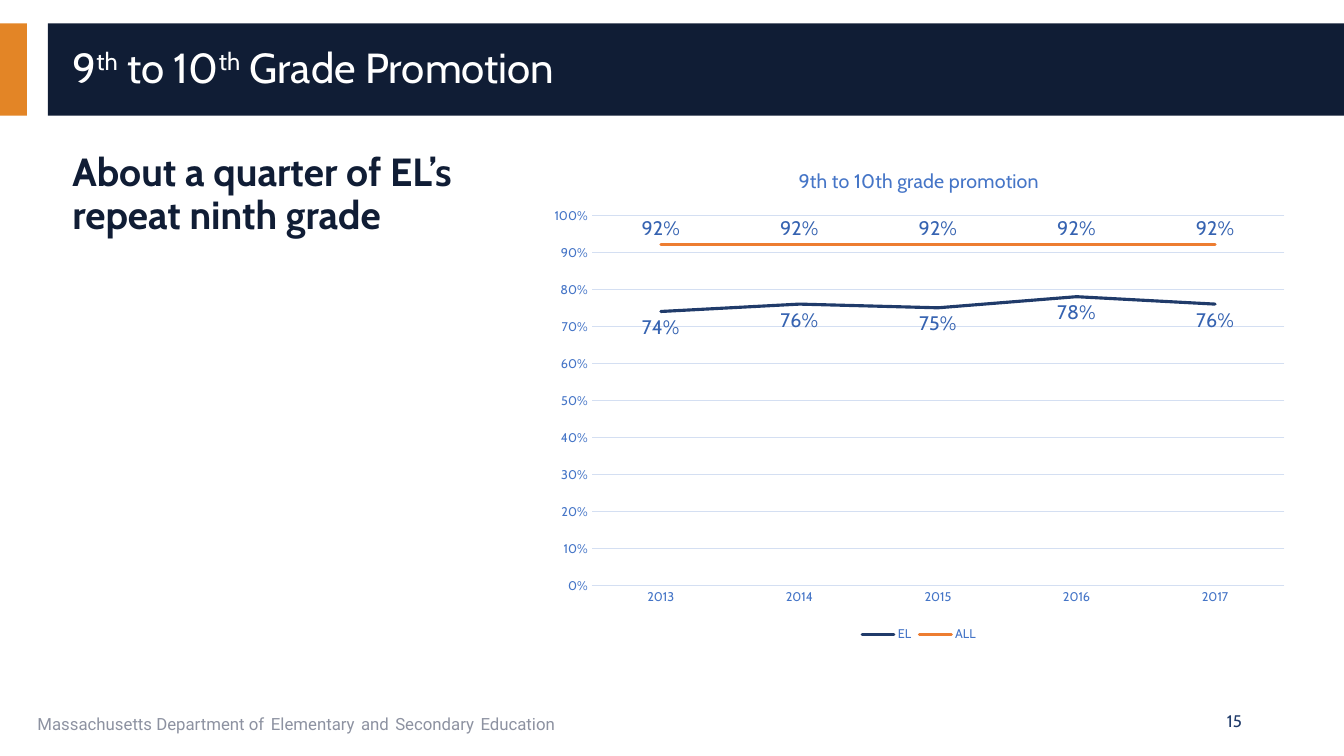
from lxml.etree import SubElement
from pptx import Presentation
from pptx.chart.data import CategoryChartData
from pptx.dml.color import RGBColor
from pptx.enum.chart import XL_CHART_TYPE, XL_LABEL_POSITION, XL_LEGEND_POSITION, XL_MARKER_STYLE, XL_TICK_MARK
from pptx.enum.shapes import MSO_SHAPE
from pptx.enum.text import MSO_ANCHOR, MSO_AUTO_SIZE, PP_ALIGN
from pptx.oxml.ns import qn
from pptx.util import Inches, Pt

WIDE, HIGH = Inches(13.33), Inches(7.5)
HUES = {"navy": "101D35", "blue": "203B6A", "mid": "4575C7", "label": "3663B1",
        "pale": "D4DFF2", "amber": "E38526", "orange": "ED7D31",
        "grey": "8D92A1", "white": "FFFFFF"}


def hue(name):
    return RGBColor.from_string(HUES[name])


def area(x, y, w, h):
    """Box from percentages of the slide's width and height."""
    return [int(v * side / 100) for v, side in zip((x, y, w, h), (WIDE, HIGH) * 2)]


def part(box, x, y, w, h):
    """Box from shares of another box."""
    left, top, wide, high = box
    return [int(v) for v in (left + x * wide, top + y * high, w * wide, h * high)]


def style(font, size, color, face="Cabin", bold=False):
    font.size, font.name, font.bold = Pt(size), face, bold
    font.color.rgb = hue(color)


def write(shape, runs, size, color, face="Cabin", bold=False,
          align=PP_ALIGN.LEFT, anchor=MSO_ANCHOR.MIDDLE, space=1.0):
    """Fill a shape with runs: plain text, or (text, size, baseline)."""
    frame = shape.text_frame
    frame.word_wrap, frame.auto_size = True, MSO_AUTO_SIZE.NONE
    frame.vertical_anchor = anchor
    para = frame.paragraphs[0]
    para.alignment, para.line_spacing = align, space
    for item in runs:
        text, pts, base = (item, size, 0) if isinstance(item, str) else item
        run = para.add_run()
        run.text = text
        style(run.font, pts, color, face, bold)
        if base:
            run._r.get_or_add_rPr().set("baseline", str(base * 1000))


def bar(slide, box, color):
    shape = slide.shapes.add_shape(MSO_SHAPE.RECTANGLE, *box)
    shape.shadow.inherit = False
    shape.fill.solid()
    shape.fill.fore_color.rgb = hue(color)
    shape.line.fill.background()


def header(slide, box):
    bar(slide, part(box, 0, 0, 0.02, 1), "amber")
    bar(slide, part(box, 0.0357, 0, 0.9643, 1), "navy")
    title = slide.shapes.title
    title.left, title.top, title.width, title.height = part(box, 0.0465, 0.17, 0.93, 0.66)
    slide.shapes._spTree.append(title._element)  # bring in front of the bars
    small = ("th", 30, 30)
    write(title, ["9", small, " to 10", small, " Grade Promotion"], 30, "white", space=0.9)


def message(slide, box):
    write(slide.shapes.add_textbox(*box), ["About a quarter of EL’s repeat ninth grade"],
          28, "navy", bold=True, anchor=MSO_ANCHOR.TOP, space=0.9)


def footer(slide, box):
    # Wider gaps between the last words
    gap = (" ", 18, 0)
    runs = ["Massachusetts Department of"]
    for word in ("Elementary", "and", "Secondary", "Education"):
        runs += [gap, word]
    write(slide.shapes.add_textbox(*part(box, 0, 0, 0.7, 1)), runs, 12, "grey", face="Roboto")
    write(slide.shapes.add_textbox(*part(box, 0.75, 0, 0.25, 1)), ["15"], 12, "blue",
          align=PP_ALIGN.RIGHT)


def trend(slide, box):
    data = CategoryChartData(number_format="0%")
    data.categories = ["2013", "2014", "2015", "2016", "2017"]
    data.add_series("EL", (0.74, 0.76, 0.75, 0.78, 0.76))
    data.add_series("ALL", (0.92,) * 5)
    chart = slide.shapes.add_chart(XL_CHART_TYPE.LINE, *box, data).chart
    style(chart.font, 10, "blue")

    # Title and legend
    chart.has_title = True
    para = chart.chart_title.text_frame.paragraphs[0]
    run = para.add_run()
    run.text = "9th to 10th grade promotion"
    style(run.font, 14, "mid")
    chart.has_legend = True
    chart.legend.position = XL_LEGEND_POSITION.BOTTOM
    chart.legend.include_in_layout = False
    style(chart.legend.font, 9, "mid")

    # Axes
    years, rates = chart.category_axis, chart.value_axis
    for axis in (years, rates):
        axis.major_tick_mark = axis.minor_tick_mark = XL_TICK_MARK.NONE
        style(axis.tick_labels.font, 9, "mid")
    rates.minimum_scale, rates.maximum_scale, rates.major_unit = 0, 1, 0.1
    rates.tick_labels.number_format = "0%"
    rates.tick_labels.number_format_is_linked = False
    rates.format.line.fill.background()
    for line in (years.format.line, rates.major_gridlines.format.line):
        line.color.rgb, line.width = hue("pale"), Pt(0.75)

    # Lines and their labels
    plot = chart.plots[0]
    plot.vary_by_categories = False
    looks = (("blue", XL_LABEL_POSITION.BELOW), ("orange", XL_LABEL_POSITION.ABOVE))
    for series, (color, side) in zip(plot.series, looks):
        series.smooth = False
        series.marker.style = XL_MARKER_STYLE.NONE
        series.format.line.color.rgb = hue(color)
        series.format.line.width = Pt(2.25)
        series.format.line._get_or_add_ln().set("cap", "rnd")
        labels = series.data_labels
        labels.show_value, labels.position = True, side
        labels.number_format, labels.number_format_is_linked = "0%", False
        style(labels.font, 14, "label")

    # Inner plot area, as shares of the chart
    field = chart._chartSpace.chart.plotArea
    for old in field.findall(qn("c:layout")):
        field.remove(old)
    frame = SubElement(field, qn("c:layout"))
    field.insert(0, frame)
    manual = SubElement(frame, qn("c:manualLayout"))
    for tag, value in (("layoutTarget", "inner"), ("xMode", "edge"), ("yMode", "edge"),
                       ("x", 0.07), ("y", 0.135), ("w", 0.91), ("h", 0.743)):
        SubElement(manual, qn("c:" + tag)).set("val", str(value))


def main():
    deck = Presentation()
    deck.slide_width, deck.slide_height = WIDE, HIGH
    slide = deck.slides.add_slide(deck.slide_layouts[5])
    header(slide, area(0, 3.1, 100, 12.2))
    message(slide, area(4.65, 19.6, 34.5, 18.27))
    trend(slide, area(40.05, 19.6, 56.65, 65.87))
    footer(slide, area(2.05, 92.67, 91.1, 5.33))
    deck.save("out.pptx")


if __name__ == "__main__":
    main()
